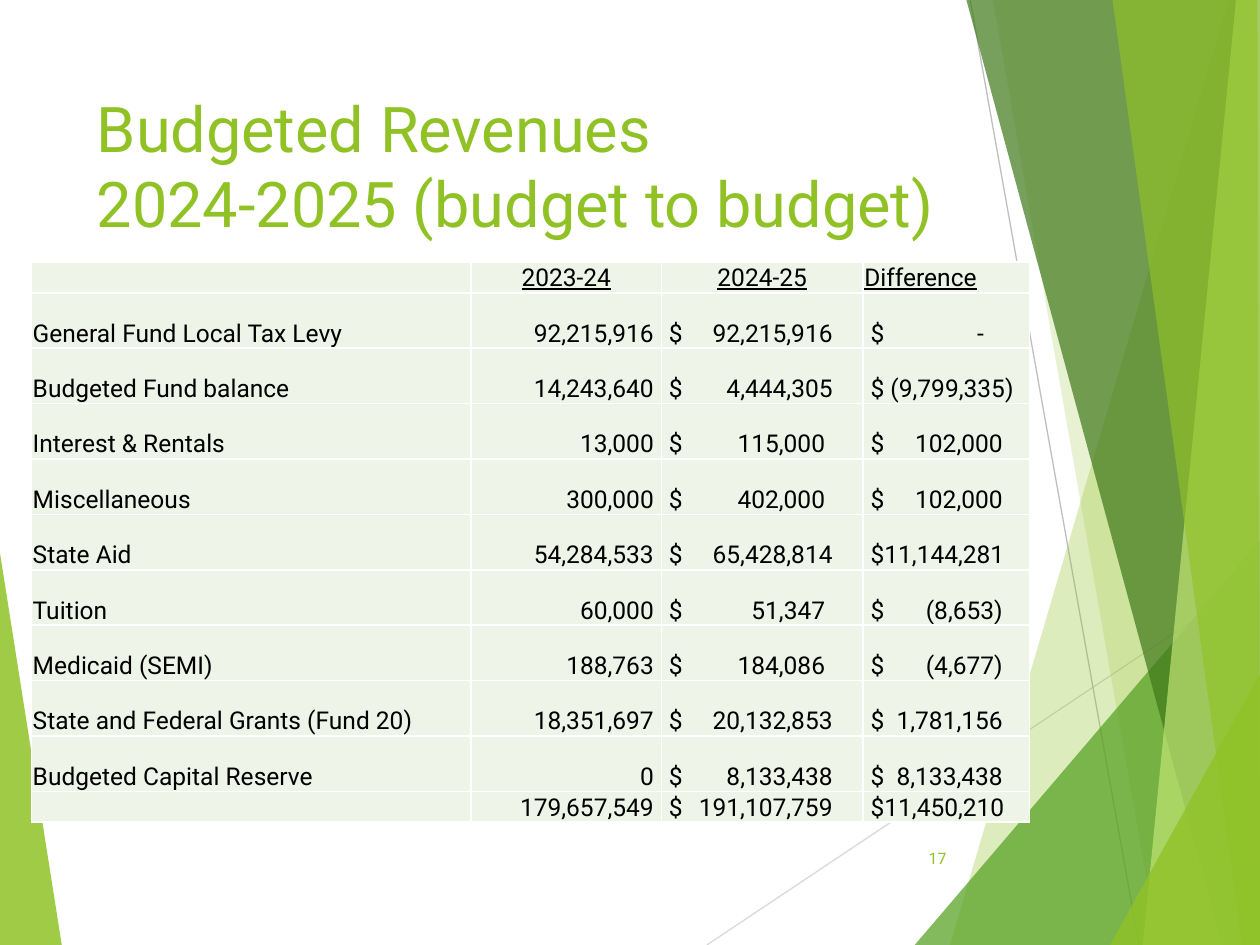
from lxml import etree
from pptx import Presentation
from pptx import util as u
from pptx.dml.color import RGBColor
from pptx.enum import text
from pptx.oxml import ns

COLOURS = {"lime": "90C226", "green": "54A021", "forest": "3F7819", "pale": "C0E474",
           "cell": "EEF4E8", "white": "FFFFFF", "ink": "000000",
           "grey": "BFBFBF", "silver": "D9D9D9"}
FONT = "Roboto"
COLUMNS, ROWS = 10, 7.5
UNIT = u.Inches(1)

LINES = [((5.61, 7.5), (10, 4.57), "silver"), ((7.7, 0), (9.04, 7.5), "grey")]
LEFT_SHARD = ([(0, 4.39), (0.49, 7.5), (0, 7.5)], "lime", 85)
SHARDS = [
    ([(9.75, 0), (7.54, 7.5), (10, 7.5), (10, 0)], "lime", 30),
    ([(7.88, 0), (9.19, 7.5), (10, 7.5), (10, 0)], "lime", 20),
    ([(7.26, 7.5), (10, 4.29), (10, 7.5)], "green", 72),
    ([(7.67, 0), (9.7, 7.5), (10, 7.5), (10, 0)], "forest", 70),
    ([(9.81, 0), (9.07, 7.5), (10, 7.5), (10, 0)], "pale", 70),
    ([(8.83, 0), (9.86, 7.5), (10, 7.5), (9.98, 0)], "lime", 65),
    ([(8.81, 7.5), (10, 5.35), (10, 7.5)], "lime", 80),
]
REVENUES = [
    ("", "2023-24", "2024-25", "Difference"),
    ("General Fund Local Tax Levy", "92,215,916", "$\t92,215,916", "$\t-"),
    ("Budgeted Fund balance", "14,243,640", "$\t4,444,305", "$ (9,799,335)"),
    ("Interest & Rentals", "13,000", "$\t115,000", "$\t102,000"),
    ("Miscellaneous", "300,000", "$\t402,000", "$\t102,000"),
    ("State Aid", "54,284,533", "$\t65,428,814", "$11,144,281"),
    ("Tuition", "60,000", "$\t51,347", "$\t(8,653)"),
    ("Medicaid (SEMI)", "188,763", "$\t184,086", "$\t(4,677)"),
    ("State and Federal Grants (Fund 20)", "18,351,697", "$\t20,132,853", "$\t1,781,156"),
    ("Budgeted Capital Reserve", "0", "$\t8,133,438", "$\t8,133,438"),
    ("", "179,657,549", "$\t191,107,759", "$11,450,210"),
]
COLUMN_WIDTHS = [3.49, 1.51, 1.6, 1.32]
ROW_HEIGHTS = [0.24] + [0.44] * 9 + [0.24]
TAB_STOPS = {2: 1.3, 3: 1.05}


def colour(name):
    """Return the named colour."""
    return RGBColor.from_string(COLOURS[name])


def cells(count):
    """Turn grid units into a length."""
    return u.Emu(round(count * UNIT))


def add_xml(parent, tag, **values):
    """Append a DrawingML element and return it."""
    return etree.SubElement(parent, ns.qn(tag), {key: str(value) for key, value in values.items()})


def set_values(target, values):
    """Set each attribute of the target from a dict."""
    for key, value in values.items():
        setattr(target, key, value)


def set_font(font, size, name, **values):
    """Format a font."""
    set_values(font, {"size": u.Pt(size), "name": FONT, **values})
    font.color.rgb = colour(name)


def draw_line(page, box, start, end, name):
    """Draw one thin line inside the box."""
    left, top = box[:2]
    points = [cells(value) for value in
              (left + start[0], top + start[1], left + end[0], top + end[1])]
    line = page.shapes.add_connector(1, *points)
    line.line.color.rgb = colour(name)
    line.line.width = u.Pt(0.75)
    add_xml(line._element.spPr, "a:effectLst")


def draw_shard(page, box, points, name, opacity):
    """Draw one translucent polygon inside the box."""
    corners = [(cells(across), cells(down)) for across, down in points]
    builder = page.shapes.build_freeform(*corners[0])
    builder.add_line_segments(corners[1:], close=True)
    shard = builder.convert_to_shape(cells(box[0]), cells(box[1]))
    shard.shadow.inherit = False
    shard.line.fill.background()
    shard.fill.solid()
    shard.fill.fore_color.rgb = colour(name)
    tint = shard._element.spPr.find(".//" + ns.qn("a:srgbClr"))
    add_xml(tint, "a:alpha", val=opacity * 1000)


def draw_backdrop(page, box):
    """Draw the faceted green edges of the slide."""
    draw_shard(page, box, *LEFT_SHARD)
    for line in LINES:
        draw_line(page, box, *line)
    for shard in SHARDS:
        draw_shard(page, box, *shard)


def draw_text(page, box, lines, size, align, anchor):
    """Write lime text in the box, one line per item."""
    frame = page.shapes.add_textbox(*map(cells, box)).text_frame
    set_values(frame, {"word_wrap": True, "vertical_anchor": anchor})
    para = frame.paragraphs[0]
    para.alignment = align
    for index, words in enumerate(lines):
        if index:
            para.add_line_break()
        span = para.add_run()
        span.text = words
        set_font(span.font, size, "lime")


def tab_stop(words, column):
    """Return where the amount after the tab ends."""
    amount = words.split("\t")[1]
    if amount == "-":
        return 0.9
    short = column == 2 and len(amount) < 8
    return TAB_STOPS[column] - (0.06 if short else 0)


def fill_cell(cell, words, row, column):
    """Write and format one table cell."""
    header = row == 0
    money = column in TAB_STOPS and not header
    set_values(cell, {
        "margin_left": cells(0.06 if money else 0.01), "margin_top": cells(0.01),
        "margin_right": cells(0.06 if column == 1 and not header else 0.01),
        "margin_bottom": 0, "vertical_anchor": text.MSO_ANCHOR.BOTTOM})
    cell.fill.solid()
    cell.fill.fore_color.rgb = colour("cell")
    para = cell.text_frame.paragraphs[0]
    align = text.PP_ALIGN
    if header:
        para.alignment = align.CENTER if column < 3 else align.LEFT
    else:
        para.alignment = align.RIGHT if column == 1 else align.LEFT
    if "\t" in words:
        stops = add_xml(para._p.get_or_add_pPr(), "a:tabLst")
        add_xml(stops, "a:tab", pos=cells(tab_stop(words, column)), algn="r")
    if words:
        span = para.add_run()
        span.text = words
        set_font(span.font, 14, "ink", underline=header)
    else:
        add_xml(para._p, "a:endParaRPr", sz=1400)
    properties = cell._tc.get_or_add_tcPr()
    for index, side in enumerate(("a:lnL", "a:lnR", "a:lnT", "a:lnB")):
        border = add_xml(properties, side, w=u.Pt(1))
        add_xml(add_xml(border, "a:solidFill"), "a:srgbClr", val=COLOURS["white"])
        properties.insert(index, border)


def draw_revenues(page, box):
    """Build the revenue table in the box."""
    table = page.shapes.add_table(len(REVENUES), len(COLUMN_WIDTHS), *map(cells, box)).table
    set_values(table, {"first_row": False, "horz_banding": False})
    for column, width in zip(table.columns, COLUMN_WIDTHS):
        column.width = cells(width)
    for row, height in zip(table.rows, ROW_HEIGHTS):
        row.height = cells(height)
    for row, record in enumerate(REVENUES):
        for column, words in enumerate(record):
            fill_cell(table.cell(row, column), words, row, column)


def main():
    """Build and save the deck."""
    deck = Presentation()
    set_values(deck, {"slide_width": cells(COLUMNS), "slide_height": cells(ROWS)})
    page = deck.slides.add_slide(deck.slide_layouts[6])
    draw_backdrop(page, (0, 0, COLUMNS, ROWS))
    draw_text(page, (0.67, 0.66, 6.94, 1.44),
              ["Budgeted Revenues", "2024-2025 (budget to budget)"],
              36, text.PP_ALIGN.LEFT, text.MSO_ANCHOR.TOP)
    draw_text(page, (7.05, 6.61, 0.56, 0.4), ["17"], 9,
              text.PP_ALIGN.RIGHT, text.MSO_ANCHOR.MIDDLE)
    draw_revenues(page, (0.25, 2.08, sum(COLUMN_WIDTHS), sum(ROW_HEIGHTS)))
    deck.save("out.pptx")


if __name__ == "__main__":
    main()
